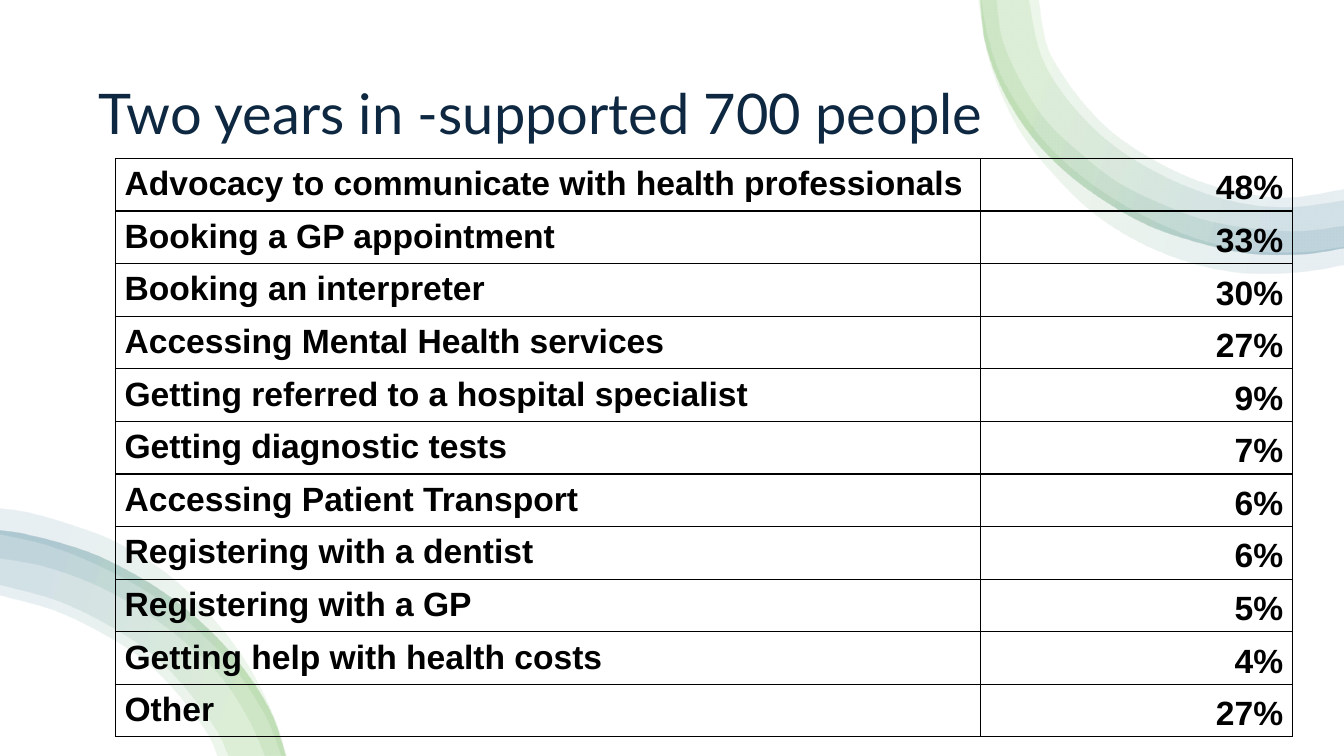
"""Build the slide that lists the kinds of support given to 700 people."""
from lxml import etree
from pptx import Presentation
from pptx.dml.color import RGBColor
from pptx.enum.shapes import MSO_SHAPE
from pptx.enum.text import MSO_ANCHOR, PP_ALIGN
from pptx.oxml.ns import qn
from pptx.util import Pt

RECTANGLE = MSO_SHAPE.RECTANGLE
TOP, MIDDLE = MSO_ANCHOR.TOP, MSO_ANCHOR.MIDDLE
LEFT, RIGHT = PP_ALIGN.LEFT, PP_ALIGN.RIGHT
SLIDE_SIZE = (960, 540)
COLORS = {
    "white": "FFFFFF",
    "navy": "0E2841",
    "black": "000000",
    "green": "4EA72E",
    "blue": "156082",
}
RIBBON_STOPS = [(16, "green"), (85, "blue")]
RIBBON_OPACITY = 10

TOP_RIGHT_EDGES = {
    "halo": [(699, 0), (704, 32), (713.5, 63), (730, 96), (753, 125), (781, 152),
             (814, 173), (852, 188), (890, 195), (930, 194), (960, 189)],
    "rim": [(701, 0), (706, 27), (716, 56), (738, 91), (762, 117), (791, 139),
            (823, 157), (857, 171), (892, 179), (929, 180), (960, 176)],
    "outer": [(700.5, 0), (704, 31), (716, 64), (735, 95), (759, 121), (788, 143),
              (820, 161), (855, 173), (892, 181), (930, 181.5), (960, 177)],
    "narrow": [(712, 0), (716, 28), (729, 58), (747, 86), (771, 109), (798, 130),
               (828, 145), (860, 157), (894, 163), (928, 165), (960, 161)],
    "medium": [(735, 0), (741, 31), (750, 53), (768, 78), (792, 101.5),
               (820, 120), (852, 135), (886, 145), (921, 148), (960, 143)],
    "wide": [(742, 0), (747, 30), (756, 49), (774, 74), (796, 96),
             (825, 115), (855, 129), (888, 138), (921, 141), (960, 135)],
}
BOTTOM_LEFT_EDGES = {
    "halo": [(0, 363), (21, 366), (52, 375), (83, 387), (120, 410),
             (151, 440), (176, 473), (195, 510), (205, 540)],
    "rim": [(0, 381.5), (36, 390), (73, 405), (109, 425),
            (140, 449), (168, 478), (190, 512), (201, 540)],
    "outer": [(0, 379), (17, 381.5), (48, 389.5), (76, 400), (112, 420),
              (144, 445), (171, 474), (193, 508), (204, 540)],
    "narrow": [(0, 399), (32, 405), (68, 418), (101, 436),
               (131, 458), (158, 484), (178, 515), (189, 540)],
    "medium": [(0, 418), (40, 429), (76, 446), (108, 467),
               (133, 492.5), (154, 521), (163, 540)],
    "wide": [(0, 425.5), (38, 436), (72, 452), (103, 472),
             (127, 496), (148, 524), (155, 540)],
}
BANDS = [("outer", "wide"), ("outer", "medium"), ("outer", "narrow"), ("halo", "rim")]

SUPPORT = [
    ("Advocacy to communicate with health professionals", "48%"),
    ("Booking a GP appointment", "33%"),
    ("Booking an interpreter", "30%"),
    ("Accessing Mental Health services", "27%"),
    ("Getting referred to a hospital specialist", "9%"),
    ("Getting diagnostic tests", "7%"),
    ("Accessing Patient Transport", "6%"),
    ("Registering with a dentist", "6%"),
    ("Registering with a GP", "5%"),
    ("Getting help with health costs", "4%"),
    ("Other", "27%"),
]
COLUMN_WIDTHS = (618, 222.6)
ROW_HEIGHT = 37.57


def rgb(name):
    """Return the named colour."""
    return RGBColor.from_string(COLORS[name])


def format_font(paragraph, name, size, color, bold=False):
    """Format every run of a paragraph."""
    for run in paragraph.runs:
        run.font.name = name
        run.font.size = Pt(size)
        run.font.bold = bold
        run.font.color.rgb = rgb(color)


def add_backdrop(slide):
    """Add the white panel that covers the slide."""
    width, height = SLIDE_SIZE
    shape = slide.shapes.add_shape(RECTANGLE, Pt(0), Pt(0), Pt(width), Pt(height))
    shape.shadow.inherit = False
    shape.fill.solid()
    shape.fill.fore_color.rgb = rgb("white")
    shape.line.fill.background()


def add_title(slide, text):
    """Add the slide title."""
    shape = slide.shapes.add_textbox(Pt(63.3), Pt(36), Pt(833), Pt(93.6))
    text_frame = shape.text_frame
    text_frame.word_wrap = True
    text_frame.vertical_anchor = MIDDLE
    text_frame.text = text
    paragraph = text_frame.paragraphs[0]
    paragraph.line_spacing = 0.9
    format_font(paragraph, "Lato", 40, "navy")


def smooth_segments(segments):
    """Turn the straight segments after the first into one smooth curve."""
    knots = [(int(segment[0].get("x")), int(segment[0].get("y"))) for segment in segments]
    padded = [knots[0], *knots, knots[-1]]
    spans = zip(padded, padded[1:], padded[2:], padded[3:])
    for segment, (before, start, end, after) in zip(segments[1:], spans):
        curve = etree.Element(qn("a:cubicBezTo"))
        first = [s + (e - b) / 6 for b, s, e in zip(before, start, end)]
        second = [e - (a - s) / 6 for s, e, a in zip(start, end, after)]
        for x, y in (first, second, end):
            etree.SubElement(curve, qn("a:pt"), x=str(round(x)), y=str(round(y)))
        segment.getparent().replace(segment, curve)


def fill_gradient(shape, angle):
    """Fill a shape with the translucent ribbon gradient, angle clockwise."""
    shape.fill.gradient()
    shape.fill.gradient_angle = 360 - angle
    stops = shape.element.spPr.find(qn("a:gradFill")).find(qn("a:gsLst"))
    for stop in list(stops):
        stops.remove(stop)
    for position, color in RIBBON_STOPS:
        stop = etree.SubElement(stops, qn("a:gs"), pos=str(position * 1000))
        value = etree.SubElement(stop, qn("a:srgbClr"), val=COLORS[color])
        etree.SubElement(value, qn("a:alpha"), val=str(RIBBON_OPACITY * 1000))


def add_ribbon(slide, edges, angle):
    """Add the overlapping bands of one corner ribbon."""
    for outside, inside in BANDS:
        outline = edges[outside] + edges[inside][::-1]
        start, *others = [(Pt(x), Pt(y)) for x, y in outline]
        builder = slide.shapes.build_freeform(*start)
        builder.add_line_segments(others, close=True)
        shape = builder.convert_to_shape()
        segments = list(next(shape.element.iter(qn("a:path"))))[:len(outline)]
        turn = len(edges[outside])
        smooth_segments(segments[:turn])
        smooth_segments(segments[turn:])
        shape.shadow.inherit = False
        shape.line.fill.background()
        fill_gradient(shape, angle)


def add_borders(cell):
    """Draw a thin black line on each side of a cell."""
    properties = cell._tc.get_or_add_tcPr()
    for index, side in enumerate(("a:lnL", "a:lnR", "a:lnT", "a:lnB")):
        line = etree.Element(qn(side), w=str(Pt(1)))
        fill = etree.SubElement(line, qn("a:solidFill"))
        etree.SubElement(fill, qn("a:srgbClr"), val=COLORS["black"])
        properties.insert(index, line)


def fill_cell(cell, text, alignment, anchor):
    """Write and format one table cell."""
    cell.fill.background()
    cell.margin_left = cell.margin_right = Pt(6.5)
    cell.margin_top, cell.margin_bottom = Pt(0.7), Pt(0)
    cell.vertical_anchor = anchor
    cell.text_frame.text = text
    paragraph = cell.text_frame.paragraphs[0]
    paragraph.alignment = alignment
    paragraph.line_spacing = 1.16
    paragraph.space_after = Pt(8)
    format_font(paragraph, "Arial", 24, "black", bold=True)
    add_borders(cell)


def add_support_table(slide):
    """Add the table of support types and their shares."""
    table = slide.shapes.add_table(
        len(SUPPORT), len(COLUMN_WIDTHS), Pt(82.5), Pt(113.2),
        Pt(sum(COLUMN_WIDTHS)), Pt(ROW_HEIGHT * len(SUPPORT))).table
    table.first_row = table.horz_banding = False
    for column, width in zip(table.columns, COLUMN_WIDTHS):
        column.width = Pt(width)
    for row, (support, share) in zip(table.rows, SUPPORT):
        row.height = Pt(ROW_HEIGHT)
        fill_cell(row.cells[0], support, LEFT, TOP)
        fill_cell(row.cells[1], share, RIGHT, MIDDLE)


def main():
    """Build and save the slide."""
    presentation = Presentation()
    presentation.slide_width, presentation.slide_height = map(Pt, SLIDE_SIZE)
    slide = presentation.slides.add_slide(presentation.slide_layouts[6])
    add_backdrop(slide)
    add_title(slide, "Two years in -supported 700 people")
    add_ribbon(slide, TOP_RIGHT_EDGES, 20)
    add_ribbon(slide, BOTTOM_LEFT_EDGES, 200)
    add_support_table(slide)
    presentation.save("out.pptx")


if __name__ == "__main__":
    main()
